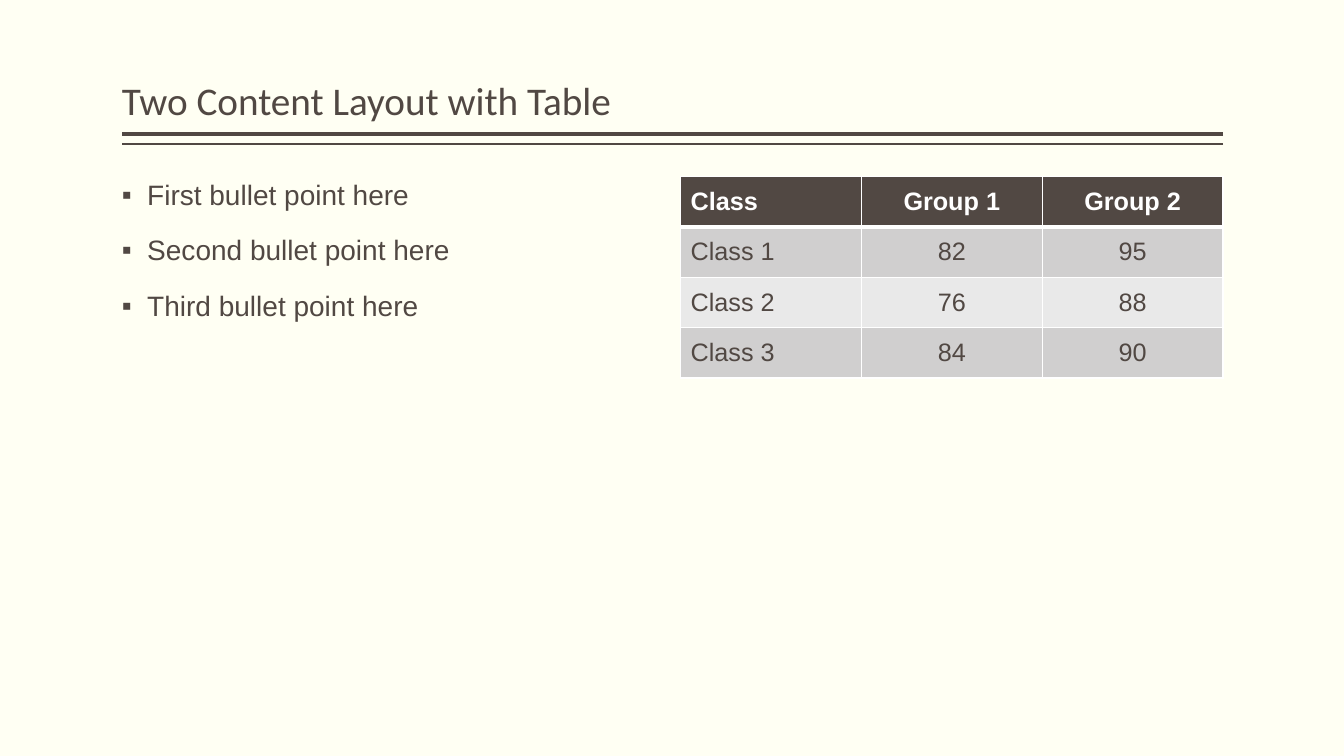
from lxml import etree
from pptx import Presentation
from pptx import util as u
from pptx.dml.color import RGBColor
from pptx.enum import shapes, text
from pptx.oxml import ns

BROWN, WHITE, CREAM = "514843", "FFFFFF", "FFFFF3"
BAND_DARK, BAND_LIGHT = "D0CFCF", "E9E9E9"
LEFT, RIGHT, CONTENT_TOP, COLUMN_WIDTH = 1.21, 12.13, 1.75, 5.38


def color(value):
    return RGBColor.from_string(value)


def add_run(paragraph, content, size, font="Arial", fill=BROWN, bold=False):
    run = paragraph.add_run()
    run.text = content
    run.font.name = font
    run.font.size = u.Pt(size)
    run.font.bold = bold
    run.font.color.rgb = color(fill)


presentation = Presentation()
presentation.slide_width = u.Inches(13.33)
presentation.slide_height = u.Inches(7.5)
slide = presentation.slides.add_slide(presentation.slide_layouts[5])
slide.background.fill.solid()
slide.background.fill.fore_color.rgb = color(CREAM)

# Double rule under the title
for y, weight in ((1.33, 3), (1.43, 1)):
    rule = slide.shapes.add_connector(
        shapes.MSO_CONNECTOR.STRAIGHT,
        u.Inches(RIGHT), u.Inches(y), u.Inches(LEFT), u.Inches(y))
    rule.line.color.rgb = color(BROWN)
    rule.line.width = u.Pt(weight)
    etree.SubElement(rule._element.spPr, ns.qn("a:effectLst"))

# Title and bullet text frames
title = slide.shapes.title
title.left, title.top = u.Inches(LEFT), u.Inches(0.08)
title.width, title.height = u.Inches(RIGHT - LEFT), u.Inches(1.2)
bullet_box = slide.shapes.add_textbox(
    u.Inches(LEFT), u.Inches(CONTENT_TOP), u.Inches(COLUMN_WIDTH), u.Inches(5))
for shape, anchor in ((title, text.MSO_ANCHOR.BOTTOM),
                      (bullet_box, text.MSO_ANCHOR.TOP)):
    frame = shape.text_frame
    frame.word_wrap = True
    frame.auto_size = text.MSO_AUTO_SIZE.NONE
    frame.vertical_anchor = anchor
    frame.margin_left = frame.margin_right = 0
    frame.margin_top = frame.margin_bottom = u.Inches(0.05)

# Title text
paragraph = title.text_frame.paragraphs[0]
paragraph.alignment = text.PP_ALIGN.LEFT
paragraph.line_spacing = 0.9
add_run(paragraph, "Two Content Layout with Table", 28, font="Calibri")

# Bullets
frame = bullet_box.text_frame
for index, ordinal in enumerate(("First", "Second", "Third")):
    paragraph = frame.add_paragraph() if index else frame.paragraphs[0]
    paragraph.line_spacing = 0.9
    paragraph.space_before = u.Pt(18)
    properties = paragraph._p.get_or_add_pPr()
    properties.set("marL", str(u.Inches(0.25)))
    properties.set("indent", str(u.Inches(-0.25)))
    etree.SubElement(properties, ns.qn("a:buFont"), typeface="Arial")
    etree.SubElement(properties, ns.qn("a:buChar"), char="▪")
    add_run(paragraph, f"{ordinal} bullet point here", 20)

# Table
rows = (
    ("Class", "Group 1", "Group 2"),
    ("Class 1", "82", "95"),
    ("Class 2", "76", "88"),
    ("Class 3", "84", "90"),
)
table = slide.shapes.add_table(
    len(rows), len(rows[0]), u.Inches(6.75), u.Inches(CONTENT_TOP),
    u.Inches(COLUMN_WIDTH), u.Inches(0.5 * len(rows))).table

for row_index, row in enumerate(rows):
    header = row_index == 0
    band = BAND_DARK if row_index % 2 else BAND_LIGHT
    for column_index, content in enumerate(row):
        cell = table.cell(row_index, column_index)
        cell.vertical_anchor = text.MSO_ANCHOR.MIDDLE
        paragraph = cell.text_frame.paragraphs[0]
        if column_index:
            paragraph.alignment = text.PP_ALIGN.CENTER
        add_run(paragraph, content, 18, fill=WHITE if header else BROWN, bold=header)

        # White borders, heavier between the header and the body
        for side in ("lnL", "lnR", "lnT", "lnB"):
            heavy = (row_index, side) in ((0, "lnB"), (1, "lnT"))
            border = etree.SubElement(cell._tc.get_or_add_tcPr(), ns.qn(f"a:{side}"),
                                      w=str(u.Pt(3 if heavy else 1)))
            solid = etree.SubElement(border, ns.qn("a:solidFill"))
            etree.SubElement(solid, ns.qn("a:srgbClr"), val=WHITE)
        cell.fill.solid()
        cell.fill.fore_color.rgb = color(BROWN if header else band)

presentation.save("out.pptx")
